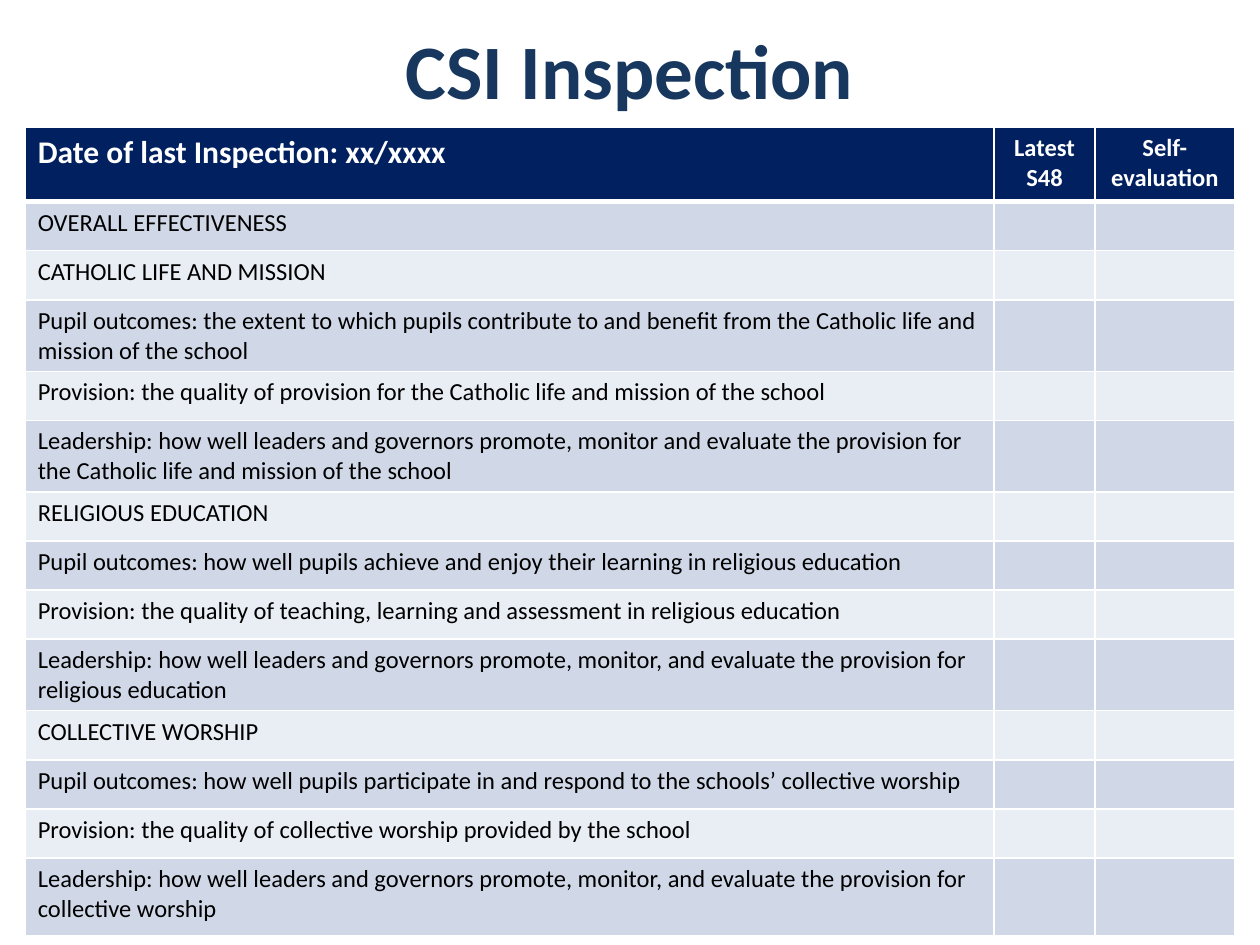
from dataclasses import dataclass

from lxml.etree import SubElement
from pptx import Presentation
from pptx.dml.color import RGBColor
from pptx.enum.text import MSO_ANCHOR, PP_ALIGN
from pptx.oxml.ns import qn
from pptx.util import Emu, Pt

PX = 9144  # one hundred px to the inch
FONT = "Calibri"
NAVY, WHITE, BLACK = "002060", "FFFFFF", "000000"
BANDS = ("D0D8E8", "E9EDF4")


@dataclass
class Style:
    size: int
    color: str
    bold: bool = False
    align: PP_ALIGN = PP_ALIGN.LEFT


@dataclass
class Row:
    text: str
    high: int = 39


TITLE = Style(44, "17375E", True, PP_ALIGN.CENTER)
DATE = Style(18, WHITE, True)
HEAD = Style(14, WHITE, True, PP_ALIGN.CENTER)
BODY = Style(14, BLACK)

COLS = (769, 80, 111)
HEADS = (
    ("Date of last Inspection: xx/xxxx", DATE),
    ("Latest\nS48", HEAD),
    ("Self-evaluation", HEAD),
)
HEAD_HIGH = 59
ROWS = (
    Row("OVERALL EFFECTIVENESS"),
    Row("CATHOLIC LIFE AND MISSION"),
    Row("Pupil outcomes: the extent to which pupils contribute to and benefit "
        "from the Catholic life and mission of the school", 55),
    Row("Provision: the quality of provision for the Catholic life and mission of the school"),
    Row("Leadership: how well leaders and governors promote, monitor and evaluate "
        "the provision for the Catholic life and mission of the school", 55),
    Row("RELIGIOUS EDUCATION"),
    Row("Pupil outcomes: how well pupils achieve and enjoy their learning in religious education"),
    Row("Provision: the quality of teaching, learning and assessment in religious education"),
    Row("Leadership: how well leaders and governors promote, monitor, and evaluate "
        "the provision for religious education", 55),
    Row("COLLECTIVE WORSHIP"),
    Row("Pupil outcomes: how well pupils participate in and respond to "
        "the schools’ collective worship"),
    Row("Provision: the quality of collective worship provided by the school"),
    Row("Leadership: how well leaders and governors promote, monitor, and evaluate "
        "the provision for collective worship", 62),
)


def px(n: int) -> Emu:
    return Emu(n * PX)


def rgb(code: str) -> RGBColor:
    return RGBColor.from_string(code)


def write(frame, text: str, style: Style) -> None:
    for i, line in enumerate(text.split("\n")):
        para = frame.paragraphs[0] if i == 0 else frame.add_paragraph()
        para.alignment = style.align
        if not line:
            # An empty cell keeps its row low through its end mark
            SubElement(para._p, qn("a:endParaRPr"), sz=str(style.size * 100))
            continue
        run = para.add_run()
        run.text = line
        font = run.font
        font.name, font.size, font.bold = FONT, Pt(style.size), style.bold
        font.color.rgb = rgb(style.color)


def edge(cell, side: str, width: int) -> None:
    line = SubElement(cell._tc.get_or_add_tcPr(), qn(f"a:{side}"), w=str(Pt(width)))
    fill = SubElement(line, qn("a:solidFill"))
    SubElement(fill, qn("a:srgbClr"), val=WHITE)


def paint(cell, text: str, style: Style, fill: str, top: int, base: int) -> None:
    write(cell.text_frame, text, style)
    # Borders come before the fill in the cell's properties
    for side, width in (("lnL", 1), ("lnR", 1), ("lnT", top), ("lnB", base)):
        edge(cell, side, width)
    cell.fill.solid()
    cell.fill.fore_color.rgb = rgb(fill)


def main() -> None:
    deck = Presentation()
    deck.slide_width, deck.slide_height = px(1000), px(750)
    slide = deck.slides.add_slide(deck.slide_layouts[6])

    # Title
    box = slide.shapes.add_textbox(px(50), px(8), px(900), px(93))
    frame = box.text_frame
    frame.word_wrap = True
    frame.vertical_anchor = MSO_ANCHOR.MIDDLE
    write(frame, "CSI Inspection", TITLE)

    # Table grid
    highs = [HEAD_HIGH] + [row.high for row in ROWS]
    table = slide.shapes.add_table(
        len(highs), len(COLS), px(20), px(101), px(sum(COLS)), px(sum(highs))
    ).table
    for col, wide in zip(table.columns, COLS):
        col.width = px(wide)
    for line, high in zip(table.rows, highs):
        line.height = px(high)

    # Header row
    for c, (text, style) in enumerate(HEADS):
        paint(table.cell(0, c), text, style, NAVY, 1, 3)

    # Banded rows, with blank cells for the grades
    for r, row in enumerate(ROWS):
        for c in range(len(COLS)):
            text = row.text if c == 0 else ""
            top = 3 if r == 0 else 1
            paint(table.cell(r + 1, c), text, BODY, BANDS[r % 2], top, 1)

    deck.save("out.pptx")


if __name__ == "__main__":
    main()
